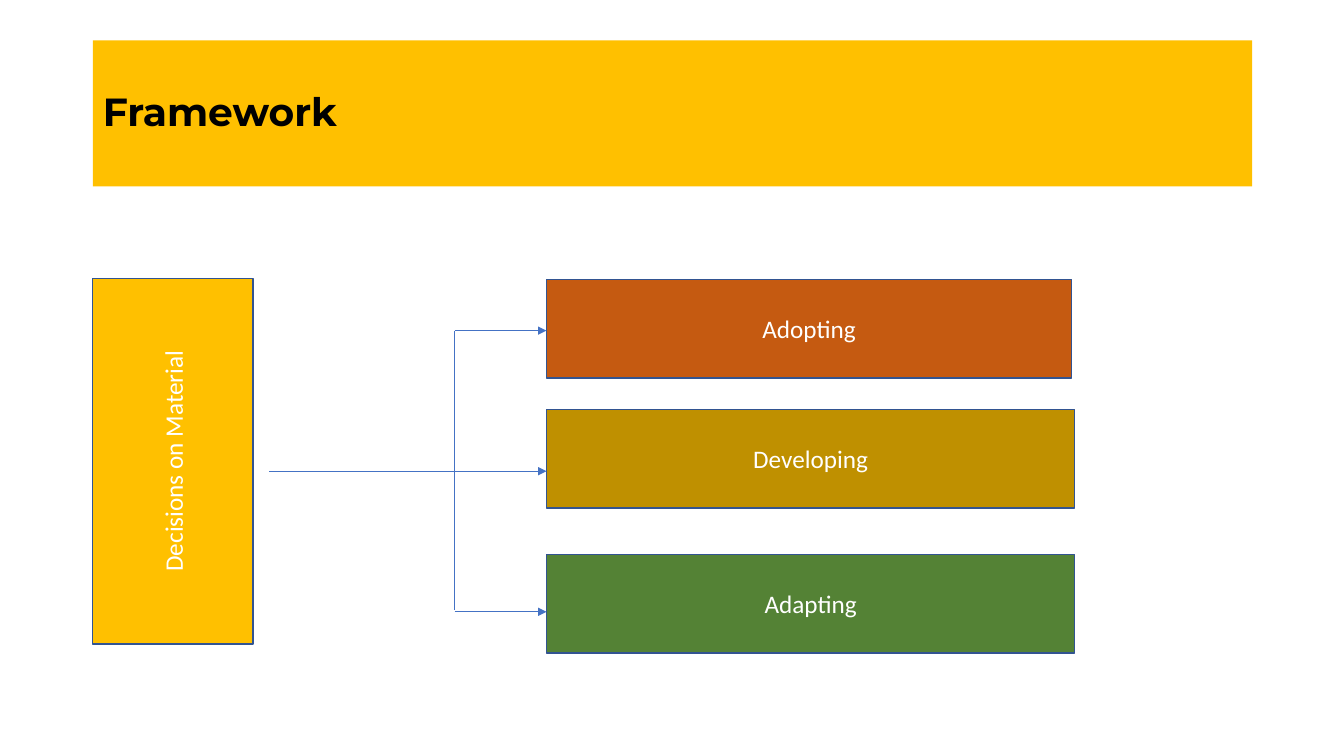
from dataclasses import dataclass

from lxml import etree
from pptx import Presentation
from pptx import util as u
from pptx.dml.color import RGBColor
from pptx.enum import shapes, text
from pptx.oxml import ns


@dataclass(frozen=True)
class Theme:
    gold: str = "FFC000"
    orange: str = "C55A11"
    ochre: str = "BF9000"
    green: str = "548235"
    outline: str = "325491"
    arrow: str = "4472C4"
    black: str = "000000"
    white: str = "FFFFFF"
    title_font: str = "Montserrat"
    body_font: str = "Calibri"
    title_size: int = 28
    body_size: int = 18
    outline_width: float = 1
    arrow_width: float = 0.5


THEME = Theme()


def inches(values):
    return [u.Inches(value) for value in values]


def fill_solid(shape, colour):
    shape.fill.solid()
    shape.fill.fore_color.rgb = RGBColor.from_string(colour)


def write(shape, wording, align, colour, **font_format):
    frame = shape.text_frame
    frame.word_wrap = True
    frame.auto_size = text.MSO_AUTO_SIZE.NONE
    frame.vertical_anchor = text.MSO_ANCHOR.MIDDLE
    para = frame.paragraphs[0]
    para.alignment = align
    span = para.add_run()
    span.text = wording
    for name, value in font_format.items():
        setattr(span.font, name, value)
    span.font.color.rgb = RGBColor.from_string(colour)
    return para


def add_title(page, box, wording):
    title = page.shapes.title
    for name, value in zip(("left", "top", "width", "height"), inches(box)):
        setattr(title, name, value)
    fill_solid(title, THEME.gold)
    para = write(title, wording, text.PP_ALIGN.LEFT, THEME.black,
                 name=THEME.title_font, size=u.Pt(THEME.title_size), bold=True)
    para.line_spacing = 0.9


def add_block(page, box, wording, colour, rotation=0):
    block = page.shapes.add_shape(shapes.MSO_SHAPE.RECTANGLE, *inches(box))
    block.shadow.inherit = False
    block.rotation = rotation
    fill_solid(block, colour)
    block.line.color.rgb = RGBColor.from_string(THEME.outline)
    block.line.width = u.Pt(THEME.outline_width)
    write(block, wording, text.PP_ALIGN.CENTER, THEME.white,
          name=THEME.body_font, size=u.Pt(THEME.body_size), bold=False)


def add_line(page, start, end, arrow=False):
    line = page.shapes.add_connector(
        shapes.MSO_CONNECTOR.STRAIGHT, *inches(start + end))
    line.line.color.rgb = RGBColor.from_string(THEME.arrow)
    line.line.width = u.Pt(THEME.arrow_width)
    if arrow:
        etree.SubElement(line.line._get_or_add_ln(), ns.qn("a:tailEnd"),
                         type="triangle")
    etree.SubElement(line._element.spPr, ns.qn("a:effectLst"))


def add_options(page, box):
    """Stack the three options; the first is a little narrower."""
    left, top, width, height = box
    options = (
        ("Adopting", THEME.orange, 0, width - 0.03),
        ("Developing", THEME.ochre, 1.29, width),
        ("Adapting", THEME.green, 2.73, width),
    )
    for wording, colour, drop, option_width in options:
        add_block(page, (left, top + drop, option_width, height),
                  wording, colour)


def add_branches(page, box):
    """Draw a stem from the left edge that forks to three arrows."""
    left, top, width, height = box
    right, bottom = left + width, top + height
    middle = top + height / 2
    fork = right - 0.91
    joint = fork - 0.91
    add_line(page, (joint, middle), (left, middle))
    add_line(page, (fork, middle), (joint, middle))
    for end in (top, bottom - 0.02):
        add_line(page, (fork, middle), (fork, end))
    for level in (top, middle, bottom):
        add_line(page, (fork, level), (right, level), arrow=True)


def build_framework(deck):
    page = deck.slides.add_slide(deck.slide_layouts[5])
    add_title(page, (0.92, 0.4, 11.5, 1.45), "Framework")
    add_block(page, (-0.1, 3.78, 3.63, 1.59), "Decisions on Material",
              THEME.gold, rotation=270)
    add_options(page, (5.42, 2.77, 5.24, 0.98))
    add_branches(page, (2.67, 3.28, 2.75, 2.79))


def main():
    deck = Presentation()
    deck.slide_width, deck.slide_height = inches((13.33, 7.5))
    build_framework(deck)
    deck.save("out.pptx")


if __name__ == "__main__":
    main()
